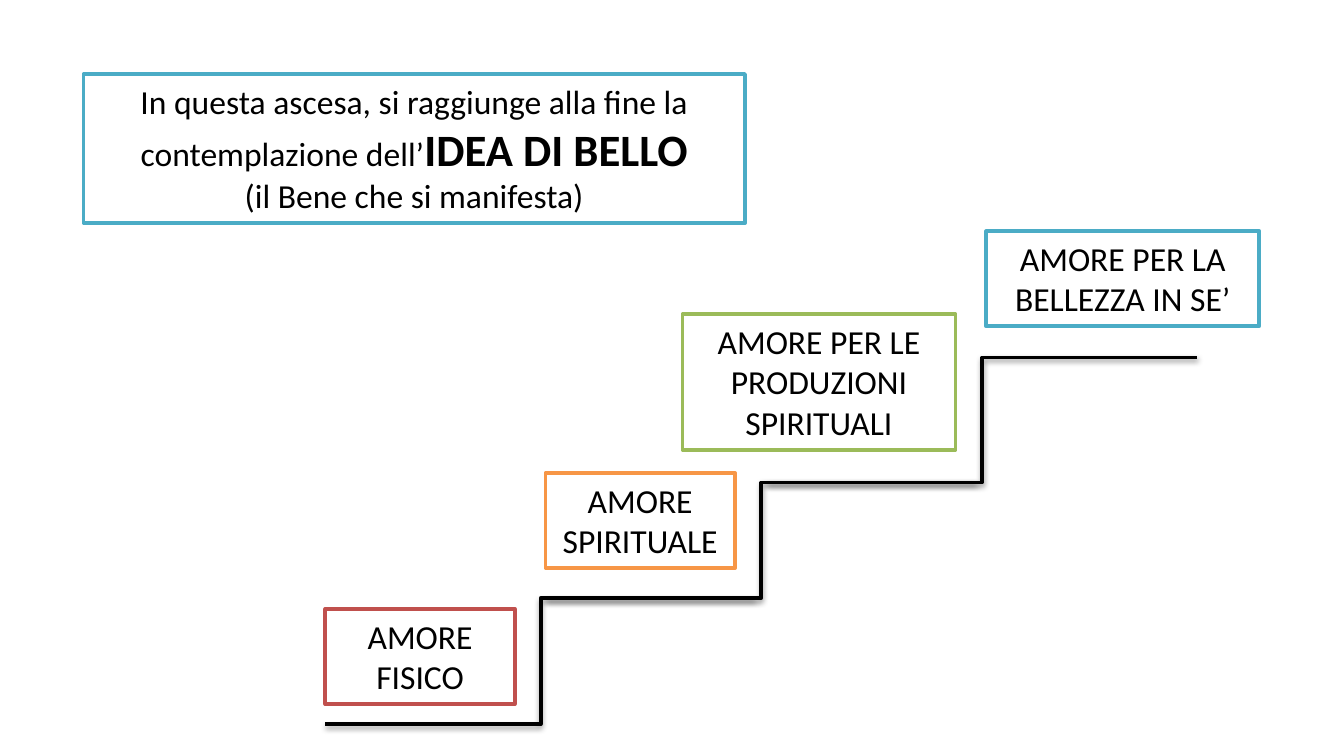
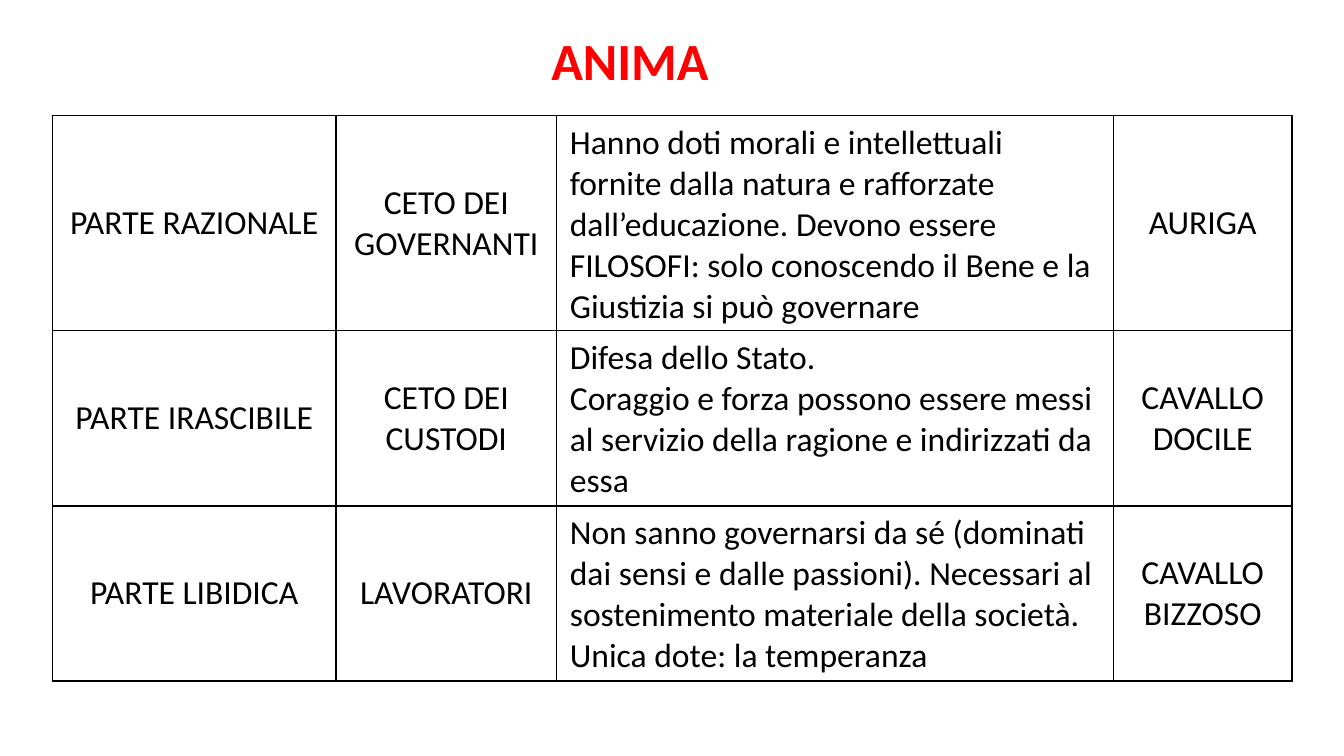
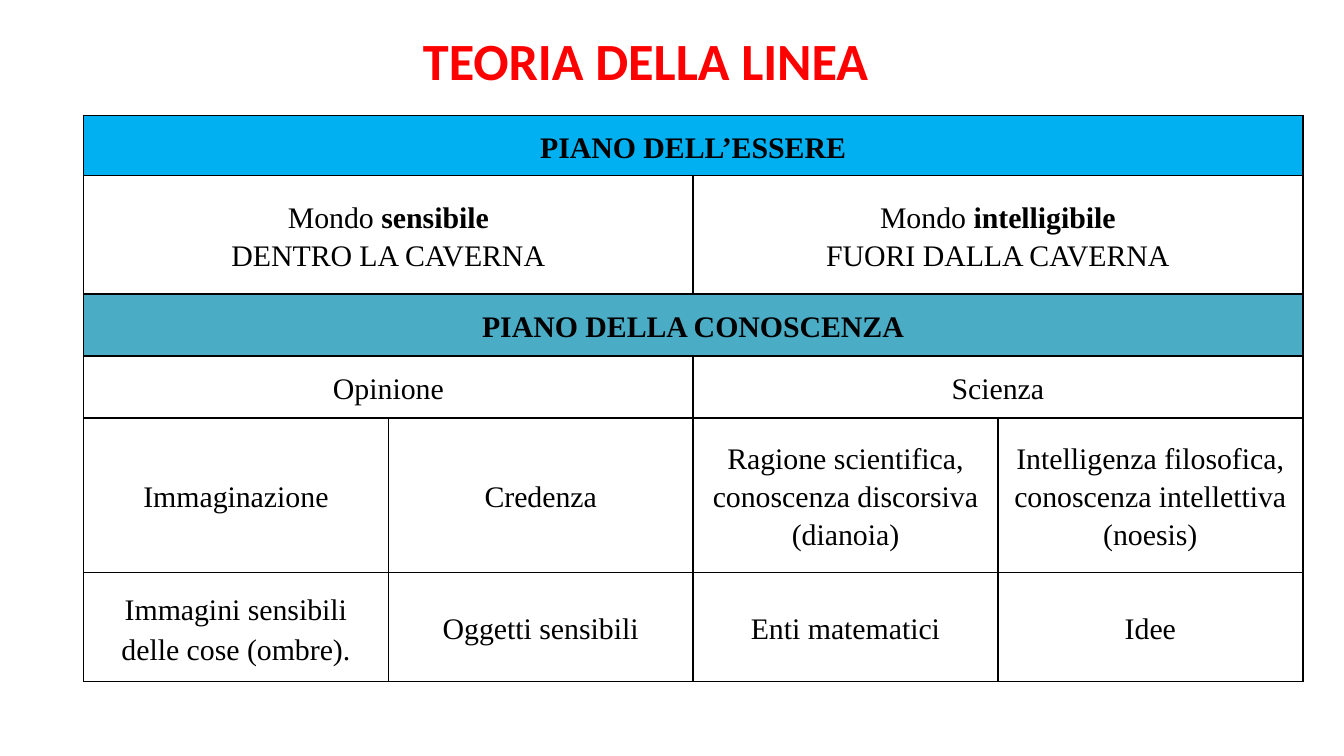
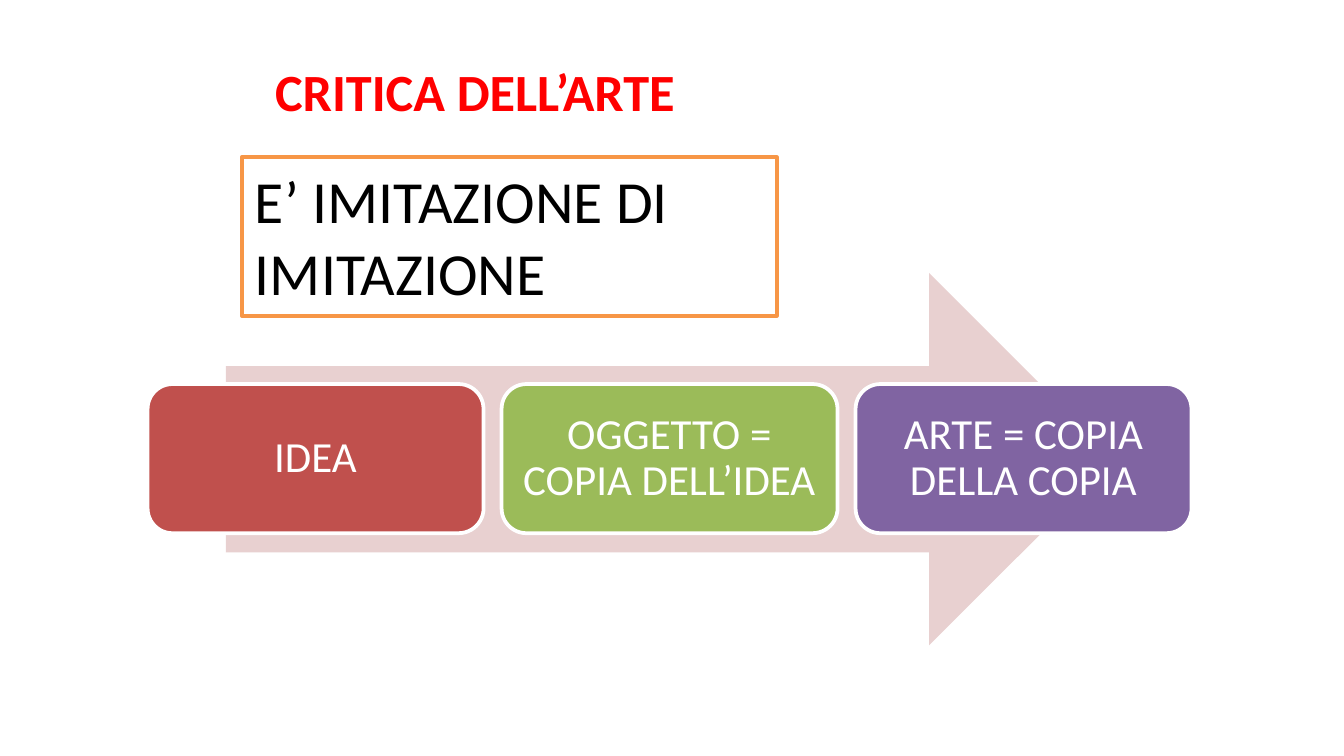
"""Build four slides on love, the soul, knowledge and art."""
from dataclasses import dataclass
from itertools import pairwise

from lxml.etree import SubElement
from pptx import Presentation
from pptx.dml.color import RGBColor
from pptx.enum.shapes import MSO_CONNECTOR, MSO_SHAPE
from pptx.enum.text import MSO_ANCHOR, PP_ALIGN
from pptx.oxml.ns import qn
from pptx.util import Cm, Pt

BLACK, WHITE, RED = "000000", "FFFFFF", "FF0000"
BRICK, GREEN, PURPLE = "C0504D", "9BBB59", "8064A2"
TEAL, ORANGE, SKY, PINK = "4BACC6", "F79646", "00B0F0", "E8D0D0"
SANS, SERIF = "Calibri", "Times New Roman"
WIDE, NARROW = (0.25, 0.13), (0.18, 0)


@dataclass(frozen=True)
class Run:
    """A stretch of text in one style."""
    text: str
    size: int = 18
    bold: bool = False
    color: str = BLACK
    font: str = SANS


@dataclass(frozen=True)
class Para:
    """A paragraph of runs."""
    runs: tuple[Run, ...]
    mid: bool = True
    gap: float | None = None


@dataclass(frozen=True)
class Box:
    """A shape with text; lengths are in centimetres."""
    left: float
    top: float
    width: float
    height: float
    paras: tuple[Para, ...] = ()
    edge: str | None = None
    fill: str | None = WHITE
    kind: MSO_SHAPE = MSO_SHAPE.RECTANGLE
    mid: bool = False
    pad: tuple[float, float] = WIDE


@dataclass(frozen=True)
class Cell:
    """A table cell that may span columns."""
    paras: tuple[Para, ...]
    fill: str | None = None
    span: int = 1
    mid: bool = True


def rgb(code: str) -> RGBColor:
    """Turn a hex string into a colour."""
    return RGBColor.from_string(code)


def paint(fill, code: str | None) -> None:
    """Fill with a colour, or with nothing."""
    if code:
        fill.solid()
        fill.fore_color.rgb = rgb(code)
    else:
        fill.background()


def write(frame, paras: tuple[Para, ...]) -> None:
    """Put paragraphs into a text frame run by run."""
    for num, para in enumerate(paras):
        item = frame.add_paragraph() if num else frame.paragraphs[0]
        item.alignment = PP_ALIGN.CENTER if para.mid else PP_ALIGN.LEFT
        if para.gap:
            item.line_spacing = para.gap
        for run in para.runs:
            part = item.add_run()
            part.text = run.text
            font = part.font
            font.name, font.size, font.bold = run.font, Pt(run.size), run.bold
            font.color.rgb = rgb(run.color)


def inset(item, pad: tuple[float, float]) -> None:
    """Set the side and top margins of a frame or cell."""
    item.margin_left = item.margin_right = Cm(pad[0])
    item.margin_top = item.margin_bottom = Cm(pad[1])


def plain(text: str, size: int = 18, mid: bool = True) -> tuple[Para, ...]:
    """Make sans paragraphs, one for each line."""
    return tuple(Para((Run(line, size),), mid) for line in text.split("\n"))


def serif(text: str, strong: str = "", gap: float = 1.15) -> Para:
    """Make a serif paragraph whose end may be bold."""
    runs = (Run(text, 16, font=SERIF), Run(strong, 16, True, font=SERIF))
    return Para(tuple(run for run in runs if run.text), gap=gap)


def place(slide, box: Box) -> None:
    """Draw a box."""
    shape = slide.shapes.add_shape(
        box.kind, Cm(box.left), Cm(box.top), Cm(box.width), Cm(box.height))
    shape.shadow.inherit = False
    paint(shape.fill, box.fill)
    paint(shape.line.fill, box.edge)
    if box.edge:
        shape.line.width = Pt(2)
    frame = shape.text_frame
    frame.word_wrap = True
    frame.vertical_anchor = MSO_ANCHOR.MIDDLE if box.mid else MSO_ANCHOR.TOP
    inset(frame, box.pad)
    write(frame, box.paras)


def title(slide, text: str, left: float, top: float, width: float,
          mid: bool = True) -> None:
    """Write a red slide title."""
    area = slide.shapes.add_textbox(Cm(left), Cm(top), Cm(width), Cm(1.45))
    area.text_frame.word_wrap = True
    write(area.text_frame, (Para((Run(text, 28, True, RED),), mid),))


def step(slide, left: float, low: float, high: float) -> None:
    """Draw one stair as a bent line with a soft shadow."""
    line = slide.shapes.add_connector(
        MSO_CONNECTOR.ELBOW, Cm(left), Cm(low), Cm(left + 8.14), Cm(high))
    line.line.width = Pt(2)
    line.line.color.rgb = rgb(BLACK)
    effect = SubElement(line._element.spPr, qn("a:effectLst"))
    shade = SubElement(
        effect, qn("a:outerShdw"), blurRad=str(Pt(3.1)), dist=str(Pt(1.6)),
        dir="5400000", rotWithShape="0")
    tint = SubElement(shade, qn("a:srgbClr"), val=BLACK)
    SubElement(tint, qn("a:alpha"), val="38000")


def frame_cell(cell) -> None:
    """Give a cell thin black borders."""
    props = cell._tc.get_or_add_tcPr()
    for side in ("lnL", "lnR", "lnT", "lnB"):
        edge = SubElement(props, qn(f"a:{side}"), w=str(Pt(1)))
        fill = SubElement(edge, qn("a:solidFill"))
        SubElement(fill, qn("a:srgbClr"), val=BLACK)


def grid(slide, left: float, cols: list[float], rows: list[float],
         cells: list[list[Cell]], pad: tuple[float, float] = WIDE) -> None:
    """Draw a bordered table."""
    table = slide.shapes.add_table(
        len(rows), len(cols), Cm(left), Cm(2.18),
        Cm(sum(cols)), Cm(sum(rows))).table
    table.first_row = table.horz_banding = False
    for col, width in zip(table.columns, cols):
        col.width = Cm(width)
    for row, height in zip(table.rows, rows):
        row.height = Cm(height)
    for cell in table.iter_cells():
        frame_cell(cell)
        paint(cell.fill, None)
    for num, line in enumerate(cells):
        col = 0
        for data in line:
            cell = table.cell(num, col)
            if data.span > 1:
                cell.merge(table.cell(num, col + data.span - 1))
            paint(cell.fill, data.fill)
            inset(cell, pad)
            cell.vertical_anchor = (
                MSO_ANCHOR.MIDDLE if data.mid else MSO_ANCHOR.TOP)
            write(cell.text_frame, data.paras)
            col += data.span


def love(slide) -> None:
    """Draw the stairs of love."""
    levels = (13.69, 11.3, 9.12, 6.76)
    for num, (low, high) in enumerate(pairwise(levels)):
        step(slide, 6.15 + num * 4.17, low, high)
    goal = (
        Para((Run("In questa ascesa, si raggiunge alla fine la "
                  "contemplazione dell’"), Run("IDEA DI BELLO", 24, True))),
        Para((Run("(il Bene che si manifesta)"),)),
    )
    for box in (
        Box(6.15, 11.51, 3.58, 1.8, plain("AMORE FISICO"), BRICK),
        Box(1.58, 1.4, 12.5, 2.82, goal, TEAL),
        Box(10.31, 8.94, 3.58, 1.8, plain("AMORE SPIRITUALE"), ORANGE),
        Box(12.9, 5.94, 5.16, 2.57,
            plain("AMORE PER LE PRODUZIONI SPIRITUALI"), GREEN),
        Box(18.64, 4.37, 5.16, 1.8,
            plain("AMORE PER LA BELLEZZA IN SE’"), TEAL),
    ):
        place(slide, box)


def soul(slide) -> None:
    """Draw the table of the soul."""
    title(slide, "ANIMA", 7.14, 0.41, 9.53)
    texts = (
        ("PARTE RAZIONALE", "CETO DEI GOVERNANTI",
         "Hanno doti morali e intellettuali fornite dalla natura e rafforzate "
         "dall’educazione. Devono essere FILOSOFI: solo conoscendo il Bene e "
         "la Giustizia si può governare", "AURIGA"),
        ("PARTE IRASCIBILE", "CETO DEI CUSTODI",
         "Difesa dello Stato.\nCoraggio e forza possono essere messi al "
         "servizio della ragione e indirizzati da essa", "CAVALLO DOCILE"),
        ("PARTE LIBIDICA", "LAVORATORI",
         "Non sanno governarsi da sé (dominati dai sensi e dalle passioni). "
         "Necessari al sostenimento materiale della società.\n"
         "Unica dote: la temperanza", "CAVALLO BIZZOSO"),
    )
    cells = [[Cell(plain(text, mid=col != 2), mid=col != 2)
              for col, text in enumerate(row)] for row in texts]
    grid(slide, 0.99, [5.36, 4.17, 10.52, 3.38], [4.06, 3.3, 3.3], cells)


def knowledge(slide) -> None:
    """Draw the table of the divided line."""
    cells = [
        [Cell((serif("", "PIANO DELL’ESSERE"),), SKY, 4)],
        [Cell((serif("Mondo ", "sensibile"),
               serif("DENTRO LA CAVERNA")), span=2),
         Cell((serif("Mondo ", "intelligibile"),
               serif("FUORI DALLA CAVERNA")), span=2)],
        [Cell((serif("", "PIANO DELLA CONOSCENZA"),), TEAL, 4)],
        [Cell((serif(text),), span=2) for text in ("Opinione", "Scienza")],
        [Cell((serif(text),)) for text in (
            "Immaginazione", "Credenza",
            "Ragione scientifica, conoscenza discorsiva (dianoia)",
            "Intelligenza filosofica, conoscenza intellettiva (noesis)")],
        [Cell((serif("Immagini sensibili delle cose (ombre).", gap=1.2),))]
        + [Cell((serif(text),)) for text in (
            "Oggetti sensibili", "Enti matematici", "Idee")],
    ]
    rows = [1.14, 2.24, 1.17, 1.17, 2.92, 2.06]
    grid(slide, 1.58, [5.76] * 4, rows, cells, NARROW)
    title(slide, "TEORIA DELLA LINEA", 5.56, 0.41, 13.28)


def art(slide) -> None:
    """Draw the path from idea to art."""
    title(slide, "CRITICA DELL’ARTE", 4.95, 0.99, 15.67, False)
    place(slide, Box(4.57, 2.97, 10.11, 3,
                     plain("E’ IMITAZIONE DI IMITAZIONE", 32, False), ORANGE))
    place(slide, Box(4.27, 5.16, 16.81, 7.04, fill=PINK,
                     kind=MSO_SHAPE.RIGHT_ARROW))
    stages = (("IDEA", BRICK), ("OGGETTO = COPIA DELL’IDEA", GREEN),
              ("ARTE = COPIA DELLA COPIA", PURPLE))
    for num, (text, fill) in enumerate(stages):
        paras = (Para((Run(text, 23, color=WHITE),), gap=0.9),)
        place(slide, Box(2.79 + num * 6.69, 7.26, 6.35, 2.82, paras, WHITE,
                         fill, MSO_SHAPE.ROUNDED_RECTANGLE, True,
                         (0.12, 0.12)))


def main() -> None:
    """Build and save the deck."""
    deck = Presentation()
    deck.slide_width, deck.slide_height = Cm(25.4), Cm(14.29)
    for draw in (love, soul, knowledge, art):
        draw(deck.slides.add_slide(deck.slide_layouts[6]))
    deck.save("out.pptx")


if __name__ == "__main__":
    main()
